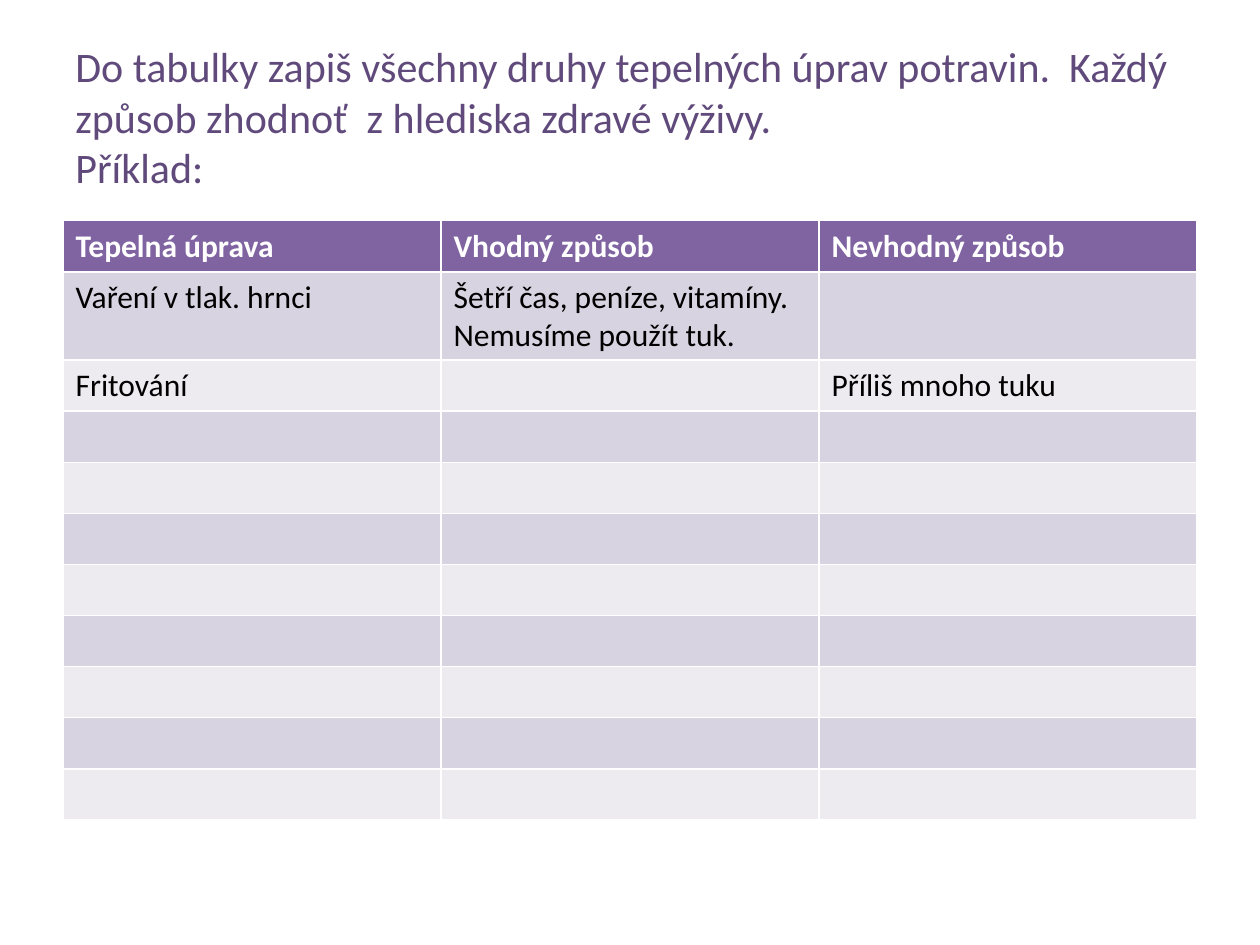
from pptx import Presentation
from pptx.dml.color import RGBColor
from pptx.enum.text import MSO_ANCHOR
from pptx.util import Cm, Pt

MIDDLE = MSO_ANCHOR.MIDDLE
FONT = "Calibri"
COLORS = {
    "title": "604A7B",
    "head": "8064A2",
    "odd": "D8D3E0",
    "even": "EDEAF0",
    "white": "FFFFFF",
    "black": "000000",
}


def style(font, size, color, bold=False):
    font.name = FONT
    font.size = Pt(size)
    font.bold = bold
    font.color.rgb = RGBColor.from_string(COLORS[color])


prs = Presentation()
prs.slide_width = Cm(25.4)
prs.slide_height = Cm(19.05)
slide = prs.slides.add_slide(prs.slide_layouts[6])

title = slide.shapes.add_textbox(Cm(1.27), Cm(0.76), Cm(22.86), Cm(3.18))
frame = title.text_frame
frame.word_wrap = True
frame.vertical_anchor = MIDDLE
para = frame.paragraphs[0]
para.text = (
    "Do tabulky zapiš všechny druhy tepelných úprav potravin.  "
    "Každý způsob zhodnoť  z hlediska zdravé výživy.\vPříklad:"
)
for run in para.runs:
    style(run.font, 24, "title")

rows = [
    ["Tepelná úprava", "Vhodný způsob", "Nevhodný způsob"],
    ["Vaření v tlak. hrnci", "Šetří čas, peníze, vitamíny. Nemusíme použít tuk.", ""],
    ["Fritování", "", "Příliš mnoho tuku"],
] + [["", "", ""]] * 8

table = slide.shapes.add_table(
    len(rows), 3, Cm(1.27), Cm(4.45), Cm(22.86), Cm(1.03) * len(rows)
).table
for r, row in enumerate(rows):
    table.rows[r].height = Cm(1.03)
    fill = "head" if r == 0 else "odd" if r % 2 else "even"
    for c, text in enumerate(row):
        cell = table.cell(r, c)
        cell.fill.solid()
        cell.fill.fore_color.rgb = RGBColor.from_string(COLORS[fill])
        para = cell.text_frame.paragraphs[0]
        if text:
            para.text = text
            style(para.runs[0].font, 18, "black" if r else "white", r == 0)

prs.save("out.pptx")
